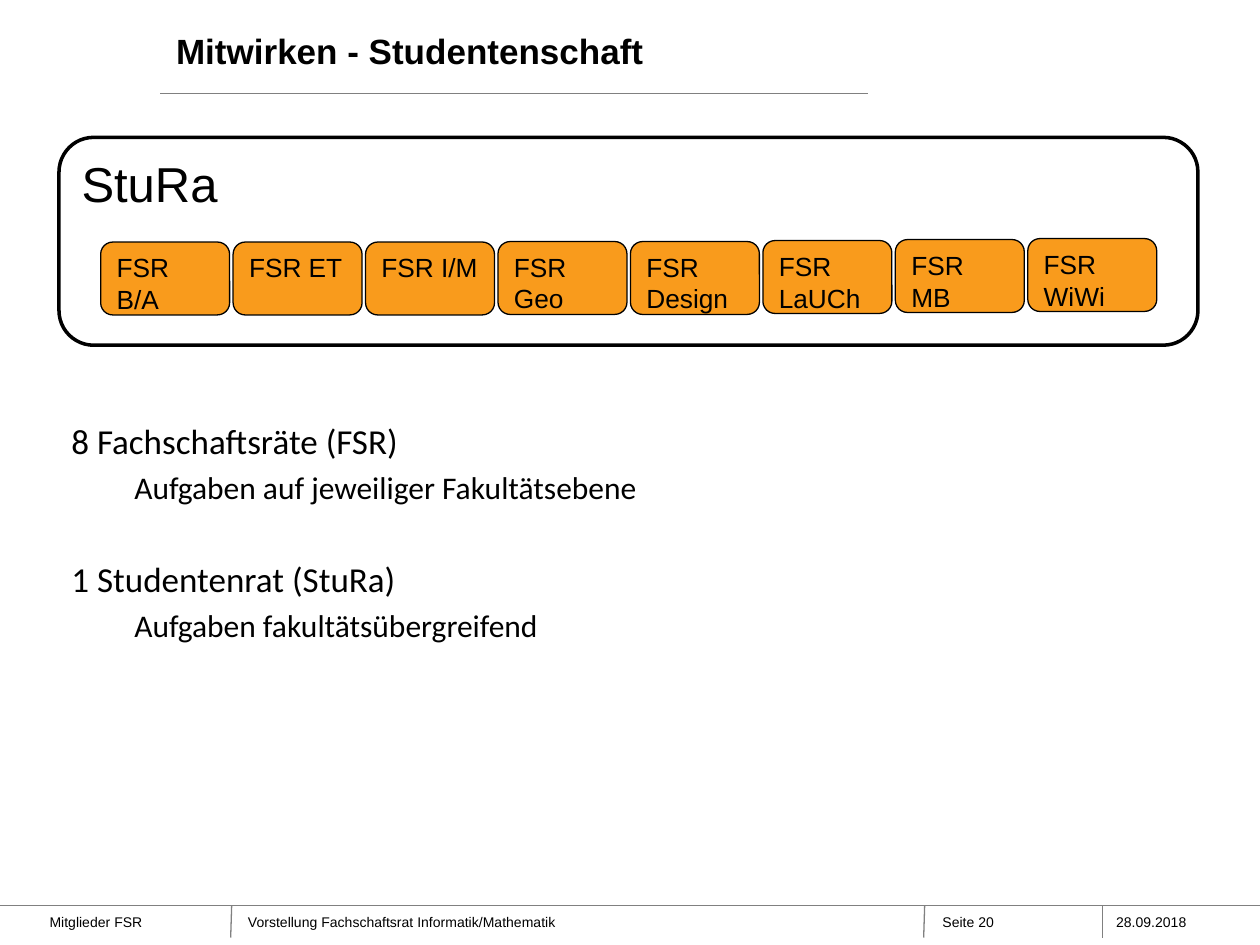
"""Build the slide on the student councils and their union."""
from lxml.etree import SubElement
from pptx import Presentation
from pptx.dml.color import RGBColor
from pptx.enum.shapes import MSO_CONNECTOR, MSO_SHAPE
from pptx.enum.text import MSO_ANCHOR, PP_ALIGN
from pptx.oxml.ns import qn
from pptx.util import Cm, Pt

BLACK = RGBColor(0x00, 0x00, 0x00)
WHITE = RGBColor(0xFF, 0xFF, 0xFF)
GREY = RGBColor(0x80, 0x80, 0x80)
ORANGE = RGBColor(0xF9, 0x9B, 0x1C)

TITLE = "Mitwirken - Studentenschaft"
UNION = "StuRa"
COUNCILS = [
    ("FSR B/A", 4.88), ("FSR ET", 4.88), ("FSR I/M", 4.88), ("FSR Geo", 4.87),
    ("FSR Design", 4.87), ("FSR LaUCh", 4.85), ("FSR MB", 4.83), ("FSR WiWi", 4.81),
]
DUTIES = [
    ("8 Fachschaftsräte (FSR)", 0, 0),
    ("Aufgaben auf jeweiliger Fakultätsebene", 1, 3.6),
    ("1 Studentenrat (StuRa)", 0, 29.6),
    ("Aufgaben fakultätsübergreifend", 1, 3.6),
]
DUTY_SIZES = (20, 18)
FOOTER = [
    ("Mitglieder FSR", 1.0, 3.0),
    ("Vorstellung Fachschaftsrat Informatik/Mathematik", 5.0, 7.09),
    ("Seite 20", 19.0, 2.79),
    ("28.09.2018", 22.5, 2.9),
]
RULES = [
    (0, 18.26, 25.4, 18.26),
    (4.67, 18.26, 4.65, 18.9),
    (18.64, 18.26, 18.62, 18.9),
    (22.23, 18.26, 22.23, 18.9),
    (3.23, 1.88, 17.5, 1.88),
]
COUNCIL_LEFT, COUNCIL_PITCH = 2.03, 2.67
COUNCIL_WIDTH, COUNCIL_HEIGHT = 2.6, 1.47


def add_text(paragraph, wording, size, font="Arial", bold=False):
    paragraph.alignment = PP_ALIGN.LEFT
    run = paragraph.add_run()
    run.text = wording
    run.font.size = Pt(size)
    run.font.name = font
    run.font.bold = bold
    run.font.color.rgb = BLACK


def add_frame(slide, left, top, width, height):
    box = slide.shapes.add_textbox(Cm(left), Cm(top), Cm(width), Cm(height))
    box.text_frame.word_wrap = True
    return box.text_frame


def add_rule(slide, start_x, start_y, end_x, end_y):
    rule = slide.shapes.add_connector(
        MSO_CONNECTOR.STRAIGHT, Cm(start_x), Cm(start_y), Cm(end_x), Cm(end_y))
    rule.line.color.rgb = GREY
    rule.line.width = Pt(0.75)
    SubElement(rule._element.spPr, qn("a:effectLst"))


def add_body(slide, wording, size, fill, border, left, top, width, height):
    body = slide.shapes.add_shape(
        MSO_SHAPE.ROUNDED_RECTANGLE, Cm(left), Cm(top), Cm(width), Cm(height))
    body.shadow.inherit = False
    body.fill.solid()
    body.fill.fore_color.rgb = fill
    body.line.color.rgb = BLACK
    body.line.width = Pt(border)
    body.text_frame.word_wrap = True
    body.text_frame.vertical_anchor = MSO_ANCHOR.TOP
    add_text(body.text_frame.paragraphs[0], wording, size)


def add_duties(slide):
    frame = add_frame(slide, 1.19, 8.33, 22.91, 5.41)
    for index, (wording, level, space) in enumerate(DUTIES):
        paragraph = frame.add_paragraph() if index else frame.paragraphs[0]
        paragraph.space_before = Pt(space)
        if level:
            paragraph.level = level
            properties = paragraph._p.get_or_add_pPr()
            properties.set("marL", str(Cm(1.27)))
            properties.set("indent", "0")
        add_text(paragraph, wording, DUTY_SIZES[level], "Calibri")


def main():
    presentation = Presentation()
    presentation.slide_width, presentation.slide_height = Cm(25.4), Cm(19.05)
    slide = presentation.slides.add_slide(presentation.slide_layouts[6])

    for wording, left, width in FOOTER:
        frame = add_frame(slide, left, 18.29, width, 0.6)
        frame.margin_left = 0
        add_text(frame.paragraphs[0], wording, 8)
    for rule in RULES:
        add_rule(slide, *rule)

    add_duties(slide)
    heading = add_frame(slide, 3.3, 0.28, 14.3, 1.47)
    heading.vertical_anchor = MSO_ANCHOR.MIDDLE
    add_text(heading.paragraphs[0], TITLE, 20, bold=True)

    add_body(slide, UNION, 28, WHITE, 2, 1.19, 2.77, 22.96, 4.19)
    for index, (council, top) in enumerate(COUNCILS):
        add_body(slide, council, 15, ORANGE, 0.75,
                 COUNCIL_LEFT + index * COUNCIL_PITCH, top,
                 COUNCIL_WIDTH, COUNCIL_HEIGHT)

    presentation.save("out.pptx")


if __name__ == "__main__":
    main()
